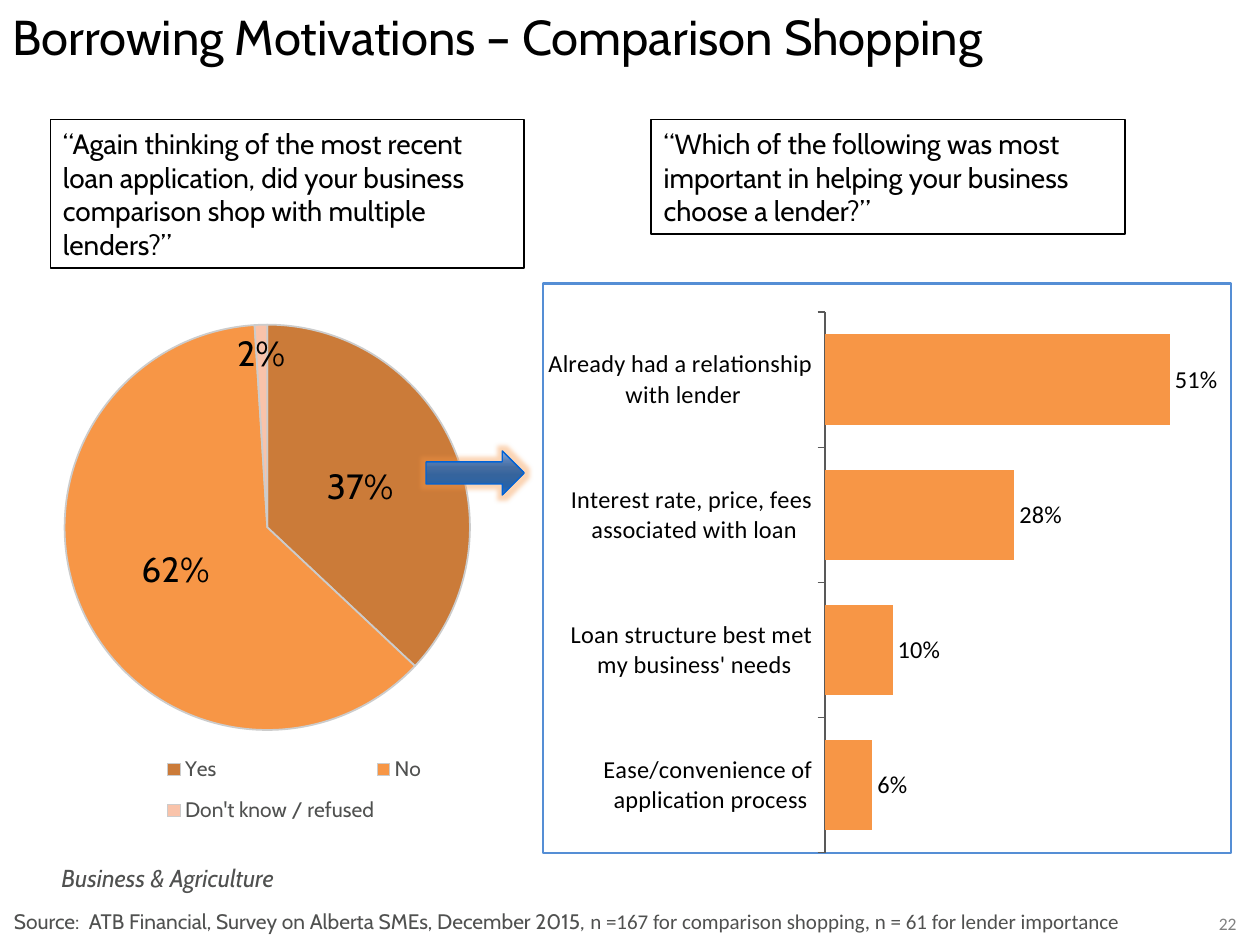
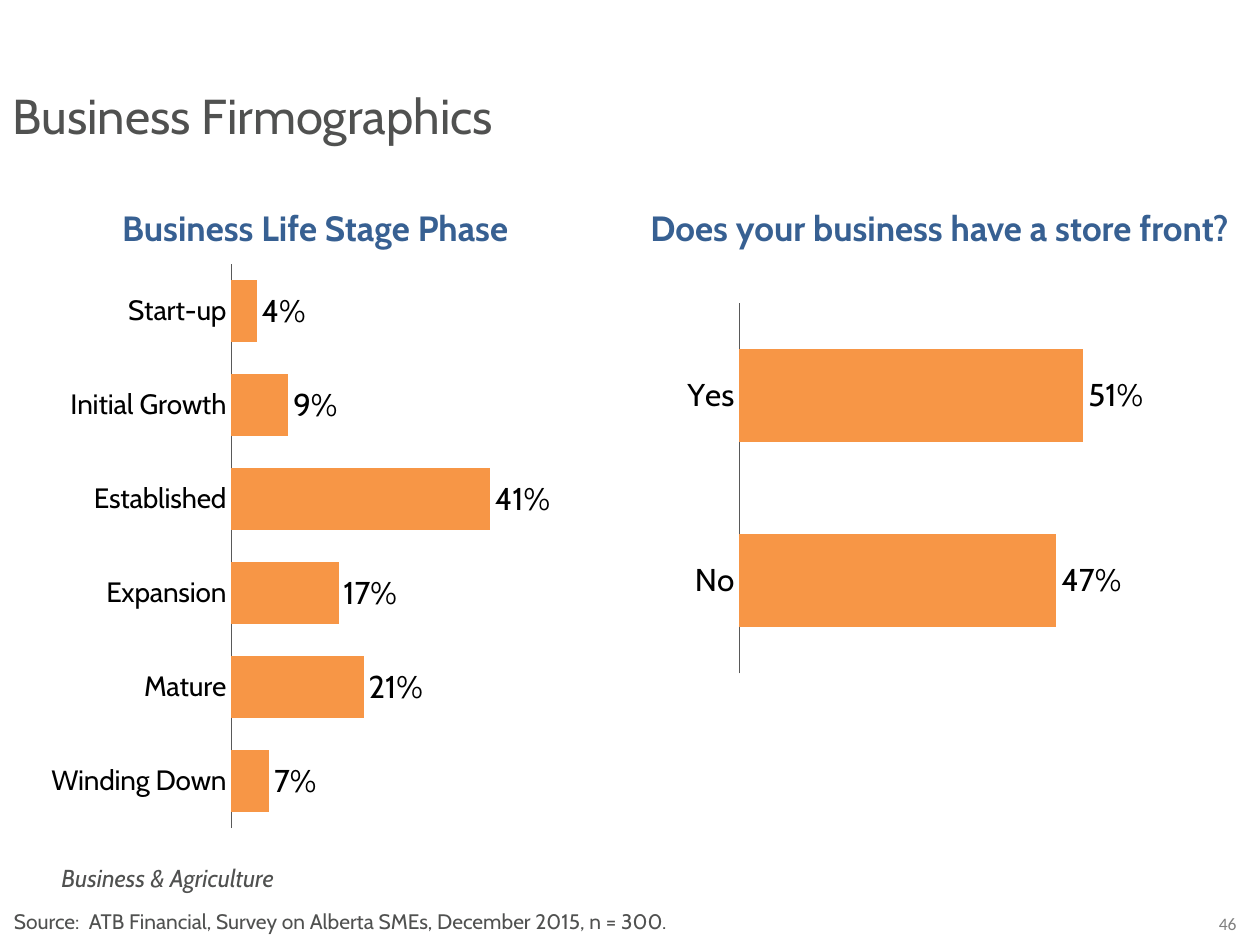
from dataclasses import dataclass

from lxml import etree
from pptx import Presentation
from pptx.chart.data import CategoryChartData
from pptx.dml.color import RGBColor
from pptx.enum.chart import (
    XL_CHART_TYPE as CT,
    XL_LABEL_POSITION as LP,
    XL_LEGEND_POSITION,
    XL_TICK_LABEL_POSITION as TLP,
    XL_TICK_MARK as TM,
)
from pptx.enum.shapes import MSO_SHAPE as MS
from pptx.enum.text import MSO_ANCHOR, MSO_AUTO_SIZE, PP_ALIGN as AL
from pptx.oxml import parse_xml
from pptx.oxml.ns import nsdecls, qn
from pptx.util import Cm, Pt


@dataclass(frozen=True)
class Theme:
    font: str = "Cabin"
    alt_font: str = "Calibri"
    black: str = "000000"
    text: str = "505150"
    number: str = "808080"
    heading: str = "376092"
    orange: str = "F79646"
    pie: tuple = ("CB7B39", "F79646", "F9C3AA")
    pie_line: str = "CCCCCC"
    axis: str = "595959"
    frame: str = "558ED5"
    arrow_line: str = "0062D7"
    arrow_stops: tuple = (
        (0, "8EACDF"), (25, "557CB1"), (38, "446CA0"), (55, "35649D"),
        (80, "2A63A6"), (88, "2667B6"), (100, "337FDB"),
    )
    title_size: int = 28
    heading_size: int = 20
    label_size: int = 18
    question_size: int = 16
    tag_size: int = 14
    small_size: int = 12
    number_size: int = 10


def rgb(value):
    return RGBColor.from_string(value)


def set_font(font, size, color, name, bold=False, italic=False):
    font.size, font.name = Pt(size), name
    font.bold, font.italic = bold, italic
    font.color.rgb = rgb(color)


def write(tf, text, size, color, name="Cabin", align=AL.LEFT, **style):
    """Fill the first paragraph; text is a string or a list of (text, font name)."""
    p = tf.paragraphs[0]
    p.alignment = align
    for part, face in [(text, name)] if isinstance(text, str) else text:
        r = p.add_run()
        r.text = part
        set_font(r.font, size, color, face, **style)


def set_layout(parent, index, box, inner=False):
    """Fix a chart part at box, given as fractions of the chart."""
    for old in parent.findall(qn("c:layout")):
        parent.remove(old)
    target = '<c:layoutTarget val="inner"/>' if inner else ""
    modes = '<c:xMode val="edge"/><c:yMode val="edge"/>'
    sizes = "".join(f'<c:{k} val="{v}"/>' for k, v in zip("xywh", box))
    parent.insert(index, parse_xml(
        f'<c:layout {nsdecls("c")}><c:manualLayout>{target}{modes}{sizes}'
        "</c:manualLayout></c:layout>"))


class Deck:
    def __init__(self, theme):
        self.theme = theme
        self.prs = Presentation()
        self.prs.slide_width, self.prs.slide_height = Cm(25.4), Cm(19.05)
        self.s = None

    def slide(self, title, title_box, title_color, source, number):
        t = self.theme
        self.s = self.prs.slides.add_slide(self.prs.slide_layouts[5])
        sp = self.s.shapes.title
        sp.left, sp.top, sp.width, sp.height = map(Cm, title_box)
        tf = sp.text_frame
        tf.vertical_anchor, tf.auto_size = MSO_ANCHOR.TOP, MSO_AUTO_SIZE.NONE
        write(tf, title, t.title_size, title_color)
        self.text((24.13, 18.29, 1.24, 0.69), number, t.number_size, t.number,
                  name=t.alt_font, align=AL.CENTER)
        self.text((0.99, 17.27, 7.14, 0.86), "Business & Agriculture",
                  t.tag_size, t.text, italic=True)
        self.text((0.03, 18.2, 23.65, 0.76), source, t.small_size, t.text)

    def text(self, box, text, size, color, **style):
        tf = self.s.shapes.add_textbox(*map(Cm, box)).text_frame
        tf.word_wrap = True
        write(tf, text, size, color, **style)

    def heading(self, box, text):
        t = self.theme
        self.text(box, text, t.heading_size, t.heading, align=AL.CENTER, bold=True)

    def shape(self, kind, box, line, width):
        sp = self.s.shapes.add_shape(kind, *map(Cm, box))
        sp.shadow.inherit = False
        sp.fill.background()
        sp.line.color.rgb, sp.line.width = rgb(line), Pt(width)
        return sp

    def question(self, box, text):
        t = self.theme
        tf = self.shape(MS.RECTANGLE, box, t.black, 1).text_frame
        tf.word_wrap = True
        write(tf, text, t.question_size, t.black)

    def arrow(self, box):
        """Right arrow with a vertical gradient and a soft glow."""
        t = self.theme
        sp = self.shape(MS.RIGHT_ARROW, box, t.arrow_line, 0.75)
        stops = "".join(
            f'<a:gs pos="{pos * 1000}"><a:srgbClr val="{color}"/></a:gs>'
            for pos, color in t.arrow_stops)
        pr = sp.element.spPr
        pr.replace(pr.find(qn("a:noFill")), parse_xml(
            f'<a:gradFill {nsdecls("a")} rotWithShape="1"><a:gsLst>{stops}</a:gsLst>'
            '<a:lin ang="5400000" scaled="0"/></a:gradFill>'))
        glow = etree.SubElement(pr.find(qn("a:effectLst")), qn("a:glow"), rad="63500")
        color = etree.SubElement(glow, qn("a:srgbClr"), val=t.orange)
        etree.SubElement(color, qn("a:alpha"), val="40000")

    def chart(self, kind, box, plot_box, values, label_size, label_font,
              position, own_label=None):
        """Add a one-series chart; own_label is (point, text, position)."""
        t = self.theme
        data = CategoryChartData(number_format="0%")
        data.categories = list(values)
        data.add_series("Series 1", list(values.values()))
        chart = self.s.shapes.add_chart(kind, *map(Cm, box), data).chart
        chart.has_title = chart.has_legend = False
        set_font(chart.font, t.label_size, t.black, t.font)
        plot = chart.plots[0]
        plot.vary_by_categories = kind == CT.PIE
        series = plot.series[0]
        labels = series.data_labels
        labels.show_value = True
        labels.number_format, labels.number_format_is_linked = "0%", False
        labels.position = position
        set_font(labels.font, label_size, t.black, label_font)
        if own_label:
            index, text, own_position = own_label
            label = series.points[index].data_label
            write(label.text_frame, text, label_size, t.black, name=label_font,
                  align=AL.CENTER)
            label.position = own_position
        set_layout(chart.element.find(".//" + qn("c:plotArea")), 0, plot_box, inner=True)
        return chart

    def pie(self, box, plot_box, legend_box, values, own_label):
        t = self.theme
        chart = self.chart(CT.PIE, box, plot_box, values, t.heading_size, t.font,
                           LP.CENTER, own_label)
        for i, color in enumerate(t.pie):
            fmt = chart.plots[0].series[0].points[i].format
            fmt.fill.solid()
            fmt.fill.fore_color.rgb = rgb(color)
            fmt.line.color.rgb, fmt.line.width = rgb(t.pie_line), Pt(1)
        chart.has_legend = True
        legend = chart.legend
        legend.position = XL_LEGEND_POSITION.BOTTOM
        legend.include_in_layout = False
        set_font(legend.font, t.small_size, t.text, t.font)
        set_layout(chart.element.find(".//" + qn("c:legend")), 1, legend_box)

    def bars(self, box, plot_box, values, top, gap, cat_size, label_size,
             face="Cabin", reverse=True, tick=TM.NONE, own_label=None):
        """Add horizontal bars on a hidden value axis that runs from 0 to top."""
        t = self.theme
        chart = self.chart(CT.BAR_CLUSTERED, box, plot_box, values, label_size, face,
                           LP.OUTSIDE_END, own_label)
        plot = chart.plots[0]
        plot.gap_width = gap
        fill = plot.series[0].format.fill
        fill.solid()
        fill.fore_color.rgb = rgb(t.orange)
        cat, val = chart.category_axis, chart.value_axis
        cat.reverse_order = reverse
        cat.major_tick_mark, cat.minor_tick_mark = tick, TM.NONE
        cat.tick_label_position = TLP.NEXT_TO_AXIS
        cat.has_major_gridlines = val.has_major_gridlines = False
        cat.format.line.color.rgb, cat.format.line.width = rgb(t.axis), Pt(0.75)
        set_font(cat.tick_labels.font, cat_size, t.black, face)
        val.minimum_scale, val.maximum_scale = 0, top
        val.visible = False
        return chart

    def frame(self, chart):
        """Draw a border around the whole chart."""
        chart.element.find(qn("c:chart")).addnext(parse_xml(
            f'<c:spPr {nsdecls("c", "a")}><a:noFill/><a:ln w="{Pt(1.5)}"><a:solidFill>'
            f'<a:srgbClr val="{self.theme.frame}"/></a:solidFill></a:ln></c:spPr>'))


SOURCE = "Source:  ATB Financial, Survey on Alberta SMEs, December 2015, "


def comparison_shopping(deck):
    t = deck.theme
    note = "n =167 for comparison shopping, n = 61 for lender importance"
    deck.slide("Borrowing Motivations – Comparison Shopping", (0, 0, 25.4, 2), t.black,
               [(SOURCE, t.font), (note, t.alt_font)], "22")
    deck.question((13.13, 2.41, 9.55, 2.31),
                  "“Which of the following was most important in helping your "
                  "business choose a lender?”")
    deck.pie((0.28, 5.74, 10.87, 11.51), (0.03, 0.07, 0.88, 0.71),
             (0.28, 0.8, 0.48, 0.17),
             {"Yes": 0.37, "No": 0.62, "Don't know / refused": 0.01},
             own_label=(2, "2%", LP.INSIDE_END))
    reasons = {
        "Ease/convenience of\n application process": 0.07,
        "Loan structure best met\n my business' needs": 0.1,
        "Interest rate, price, fees\n associated with loan": 0.28,
        "Already had a relationship\n with lender": 0.51,
    }
    deck.frame(deck.bars(
        (10.92, 5.69, 13.92, 11.53), (0.41, 0.05, 0.59, 0.95), reasons, top=0.6, gap=50,
        cat_size=t.tag_size, label_size=t.tag_size, face=t.alt_font, reverse=False,
        tick=TM.OUTSIDE, own_label=(0, "6%", LP.OUTSIDE_END)))
    deck.question((1.02, 2.41, 9.55, 3),
                  "“Again thinking of the most recent loan application, did your "
                  "business comparison shop with multiple lenders?”")
    deck.arrow((8.59, 9.09, 1.98, 0.89))


def firmographics(deck):
    t = deck.theme
    deck.slide("Business Firmographics", (0, 1.6, 14.83, 1.45), t.text,
               SOURCE + "n = 300.", "46")
    deck.bars((8.74, 5.79, 16.66, 7.8), (0.37, 0.04, 0.49, 0.96),
              {"Yes": 0.51, "No": 0.47}, top=0.6, gap=100,
              cat_size=t.label_size, label_size=t.label_size)
    deck.heading((11.2, 4.04, 15.49, 1.12), "Does your business have a store front?")
    deck.heading((1.91, 4.04, 8.89, 1.12), "Business Life Stage Phase")
    stages = {"Start-up": 0.04, "Initial Growth": 0.09, "Established": 0.41,
              "Expansion": 0.17, "Mature": 0.21, "Winding Down": 0.06}
    deck.bars((-1.83, 5.31, 14.76, 11.86), (0.44, 0, 0.56, 0.96), stages, top=0.65,
              gap=50, cat_size=t.question_size, label_size=t.label_size,
              own_label=(5, "7%", LP.OUTSIDE_END))


def main():
    deck = Deck(Theme())
    comparison_shopping(deck)
    firmographics(deck)
    deck.prs.save("out.pptx")


if __name__ == "__main__":
    main()
